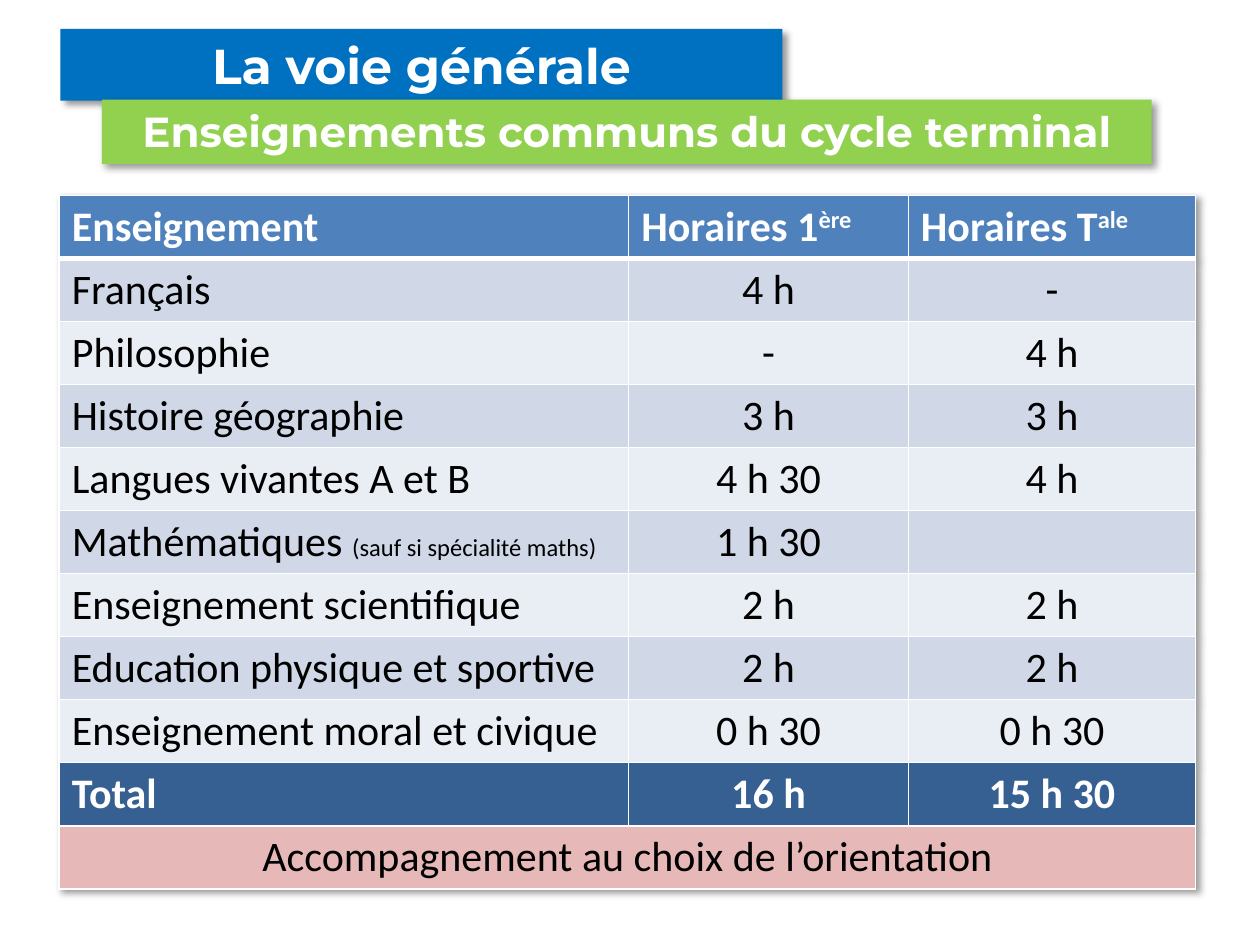
from dataclasses import dataclass
from typing import NamedTuple

from lxml.etree import SubElement, _Element as Element
from pptx import Presentation
from pptx.dml.color import RGBColor
from pptx.enum.shapes import MSO_SHAPE as Preset
from pptx.enum.text import MSO_ANCHOR as Anchor, MSO_AUTO_SIZE as AutoSize, PP_ALIGN as Align
from pptx.oxml.ns import qn
from pptx.slide import Slide
from pptx.table import _Cell as Cell
from pptx.text.text import TextFrame
from pptx.util import Inches, Pt


@dataclass(frozen=True)
class Theme:
    title_font: str = "Montserrat"
    body_font: str = "Calibri"
    title_size: int = 28
    body_size: int = 24
    note_size: int = 14
    white: str = "FFFFFF"
    black: str = "000000"
    blue: str = "0070C0"
    green: str = "92D050"
    header: str = "4F81BD"
    bands: tuple[str, str] = ("D0D8E8", "E9EDF4")
    total: str = "376092"
    support: str = "E6B9B8"


THEME = Theme()


class Run(NamedTuple):
    text: str
    size: int = THEME.body_size
    baseline: int = 0


class Banner(NamedTuple):
    text: str
    left: float
    top: float
    width: float
    height: float
    fill: str
    size: int


class Row(NamedTuple):
    cells: tuple[list[Run], ...]
    fill: str
    color: str = THEME.black
    bold: bool = False
    value_align: Align = Align.CENTER
    bottom_border: int = 1


BANNERS = [
    Banner("La voie générale", 0.48, 0.23, 5.73, 0.57, THEME.blue, THEME.title_size),
    Banner("Enseignements communs du cycle terminal", 0.81, 0.79, 8.33, 0.51,
           THEME.green, THEME.body_size),
]
HEADER = ([Run("Enseignement")],
          [Run("Horaires 1"), Run("ère", baseline=30)],
          [Run("Horaires T"), Run("ale", baseline=30)])
SUBJECTS = [
    ("Français", "4 h", "-"),
    ("Philosophie", "-", "4 h"),
    ("Histoire géographie", "3 h", "3 h"),
    ("Langues vivantes A et B", "4 h 30", "4 h"),
    ("Mathématiques ", "1 h 30", ""),
    ("Enseignement scientifique", "2 h", "2 h"),
    ("Education physique et sportive", "2 h", "2 h"),
    ("Enseignement moral et civique", "0 h 30", "0 h 30"),
]
SUBJECT_NOTES = {"Mathématiques ": "(sauf si spécialité maths)"}
TOTAL = ("Total", "16 h", "15 h 30")
SUPPORT = "Accompagnement au choix de l’orientation"
COLUMN_WIDTHS = (4.52, 2.22, 2.28)
ROW_HEIGHT = 0.5


def write_text(frame: TextFrame, runs: list[Run], *, font: str, color: str,
               bold: bool = False, align: Align = Align.LEFT) -> None:
    paragraph = frame.paragraphs[0]
    paragraph.alignment = align
    for item in runs:
        run = paragraph.add_run()
        run.text = item.text
        run.font.name = font
        run.font.size = Pt(item.size)
        run.font.bold = bold
        run.font.color.rgb = RGBColor.from_string(color)
        if item.baseline:
            run.font._element.set("baseline", str(item.baseline * 1000))


def add_shadow(effects: Element) -> None:
    """Fill an effect list with a soft shadow towards the lower right."""
    shadow = SubElement(effects, qn("a:outerShdw"), blurRad=str(Pt(4)), dist=str(Pt(3)),
                        dir=str(45 * 60000), algn="tl", rotWithShape="0")
    color = SubElement(shadow, qn("a:srgbClr"), val=THEME.black)
    SubElement(color, qn("a:alpha"), val="40000")


def add_banner(slide: Slide, banner: Banner) -> None:
    shape = slide.shapes.add_shape(Preset.RECTANGLE, Inches(banner.left), Inches(banner.top),
                                   Inches(banner.width), Inches(banner.height))
    shape.fill.solid()
    shape.fill.fore_color.rgb = RGBColor.from_string(banner.fill)
    shape.line.fill.background()
    shape.shadow.inherit = False
    add_shadow(shape._element.spPr.find(qn("a:effectLst")))
    frame = shape.text_frame
    frame.word_wrap = True
    frame.auto_size = AutoSize.SHAPE_TO_FIT_TEXT
    frame.vertical_anchor = Anchor.TOP
    write_text(frame, [Run(banner.text, banner.size)], font=THEME.title_font,
               color=THEME.white, bold=True, align=Align.CENTER)


def style_cell(cell: Cell, fill: str, top: int, bottom: int) -> None:
    """Draw white borders, widths in points, then the fill."""
    properties = cell._tc.get_or_add_tcPr()
    for side, width in (("lnL", 1), ("lnR", 1), ("lnT", top), ("lnB", bottom)):
        line = SubElement(properties, qn(f"a:{side}"), w=str(Pt(width)))
        SubElement(SubElement(line, qn("a:solidFill")), qn("a:srgbClr"), val=THEME.white)
    cell.fill.solid()
    cell.fill.fore_color.rgb = RGBColor.from_string(fill)


def table_rows() -> list[Row]:
    rows = [Row(HEADER, THEME.header, THEME.white, True, Align.LEFT, 3)]
    for index, (subject, *hours) in enumerate(SUBJECTS):
        name = [Run(subject)]
        if subject in SUBJECT_NOTES:
            name.append(Run(SUBJECT_NOTES[subject], THEME.note_size))
        values = ([Run(text)] if text else [] for text in hours)
        rows.append(Row((name, *values), THEME.bands[index % 2]))
    rows.append(Row(tuple([Run(text)] for text in TOTAL), THEME.total, THEME.white, True))
    rows.append(Row(([Run(SUPPORT)], [], []), THEME.support))
    return rows


def add_hours_table(slide: Slide, rows: list[Row]) -> None:
    frame = slide.shapes.add_table(len(rows), len(COLUMN_WIDTHS), Inches(0.47), Inches(1.55),
                                   Inches(sum(COLUMN_WIDTHS)), Inches(ROW_HEIGHT * len(rows)))
    table = frame.table
    effects = table._tbl.tblPr.makeelement(qn("a:effectLst"))
    table._tbl.tblPr.insert(0, effects)
    add_shadow(effects)
    for column, width in zip(table.columns, COLUMN_WIDTHS):
        column.width = Inches(width)

    last = len(rows) - 1
    table.cell(last, 0).merge(table.cell(last, len(COLUMN_WIDTHS) - 1))
    top_border = 1
    for row_index, row in enumerate(rows):
        for column_index, runs in enumerate(row.cells):
            cell = table.cell(row_index, column_index)
            style_cell(cell, row.fill, top_border, row.bottom_border)
            centred = column_index > 0 or row_index == last
            write_text(cell.text_frame, runs, font=THEME.body_font, color=row.color,
                       bold=row.bold, align=row.value_align if centred else Align.LEFT)
        top_border = row.bottom_border


def main() -> None:
    presentation = Presentation()
    presentation.slide_width = Inches(10)
    presentation.slide_height = Inches(7.5)
    slide = presentation.slides.add_slide(presentation.slide_layouts[6])
    for banner in BANNERS:
        add_banner(slide, banner)
    add_hours_table(slide, table_rows())
    presentation.save("out.pptx")


if __name__ == "__main__":
    main()
